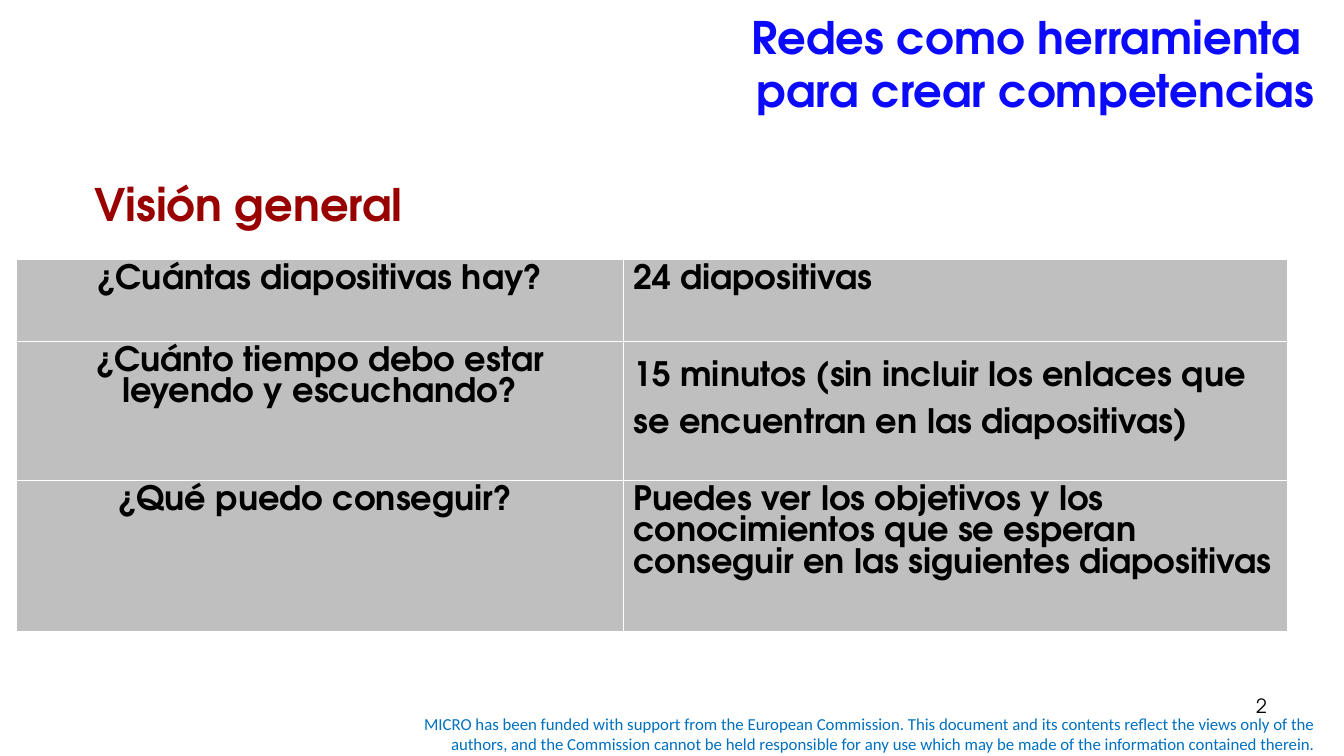
from dataclasses import dataclass

from lxml.etree import SubElement
from pptx import Presentation
from pptx.dml.color import RGBColor
from pptx.enum.text import MSO_ANCHOR, PP_ALIGN
from pptx.oxml.ns import qn
from pptx.util import Pt


@dataclass(frozen=True)
class Theme:
    """Hold the colours, fonts and type sizes."""
    head: str = "TeX Gyre Adventor"
    body: str = "Calibri"
    blue: str = "0B0AFD"
    red: str = "990000"
    sky: str = "0070C0"
    black: str = "000000"
    grey: str = "BFBFBF"
    white: str = "FFFFFF"
    big: int = 32
    cell: int = 24
    page: int = 14
    note: int = 12
    tight: float = 1.0
    loose: float = 1.5


THEME = Theme()


def add_run(par, text, face, size, tone, bold=False):
    """Add one styled run to a paragraph."""
    run = par.add_run()
    run.text = text
    font = run.font
    font.name, font.size, font.bold = face, Pt(size), bold
    font.color.rgb = RGBColor.from_string(tone)


def add_text(slide, box, lines, style, align=PP_ALIGN.LEFT, anchor=MSO_ANCHOR.TOP):
    """Place a text box whose lines share one paragraph."""
    frame = slide.shapes.add_textbox(*map(Pt, box)).text_frame
    frame.word_wrap = True
    frame.vertical_anchor = anchor
    par = frame.paragraphs[0]
    par.alignment = align
    for index, line in enumerate(lines):
        if index:
            par.add_line_break()
        add_run(par, line, *style)


def add_edges(cell):
    """Draw thin white borders round a table cell."""
    props = cell._tc.get_or_add_tcPr()
    for index, side in enumerate(("lnL", "lnR", "lnT", "lnB")):
        line = props.makeelement(qn(f"a:{side}"), {"w": str(Pt(1))})
        fill = SubElement(line, qn("a:solidFill"))
        SubElement(fill, qn("a:srgbClr"), val=THEME.white)
        props.insert(index, line)


def add_facts(slide, box):
    """Place the table of questions and answers."""
    left, top, width, height = box
    rows = (
        (58.3, "¿Cuántas diapositivas hay?", "24 diapositivas", THEME.tight),
        (99.6, "¿Cuánto tiempo debo estar leyendo y escuchando?",
         "15 minutos (sin incluir los enlaces que se encuentran en las diapositivas)",
         THEME.loose),
        (108, "¿Qué puedo conseguir? ",
         "Puedes ver los objetivos y los conocimientos que se esperan "
         "conseguir en las siguientes diapositivas", THEME.tight),
    )
    table = slide.shapes.add_table(len(rows), 2, *map(Pt, box)).table
    first = 433.7
    for col, wide in zip(table.columns, (first, width - first)):
        col.width = Pt(wide)
    for index, (tall, ask, reply, space) in enumerate(rows):
        table.rows[index].height = Pt(tall)
        parts = ((ask, PP_ALIGN.CENTER, THEME.tight), (reply, PP_ALIGN.LEFT, space))
        for place, (text, align, gap) in enumerate(parts):
            cell = table.cell(index, place)
            cell.fill.solid()
            cell.fill.fore_color.rgb = RGBColor.from_string(THEME.grey)
            add_edges(cell)
            par = cell.text_frame.paragraphs[0]
            par.alignment, par.line_spacing = align, gap
            add_run(par, text, THEME.head, THEME.cell, THEME.black, True)


def add_head(slide, box):
    """Place the slide title and the heading under it."""
    left, top, width, height = box
    add_text(slide, box, ("Redes como herramienta ", "para crear competencias"),
             (THEME.head, THEME.big, THEME.blue, True),
             PP_ALIGN.RIGHT, MSO_ANCHOR.MIDDLE)
    add_text(slide, (left - 21.8, top + 122.6, 312.5, 46), ("Visión general",),
             (THEME.head, THEME.big, THEME.red, True))


def add_foot(slide, box):
    """Place the funding note and the page number."""
    left, top, width, height = box
    add_text(slide, box,
             ("MICRO has been funded with support from the European Commission. "
              "This document and its contents reflect the views only of the authors, "
              "and the Commission cannot be held responsible for any use which may be "
              "made of the information contained therein.",),
             (THEME.body, THEME.note, THEME.sky), PP_ALIGN.RIGHT, MSO_ANCHOR.MIDDLE)
    add_text(slide, (left + 418.1, top - 14.4, 223.9, 37.4), ("2",),
             (THEME.head, THEME.page, THEME.black), PP_ALIGN.RIGHT)


def main():
    """Build and save the slide."""
    deck = Presentation()
    deck.slide_width, deck.slide_height = Pt(960), Pt(540)
    slide = deck.slides.add_slide(deck.slide_layouts[6])
    add_foot(slide, (270, 506.2, 676.8, 36))
    add_facts(slide, (11.5, 185.6, 908.6, 265.9))
    add_head(slide, (82.1, 0, 864, 90))
    deck.save("out.pptx")


if __name__ == "__main__":
    main()
